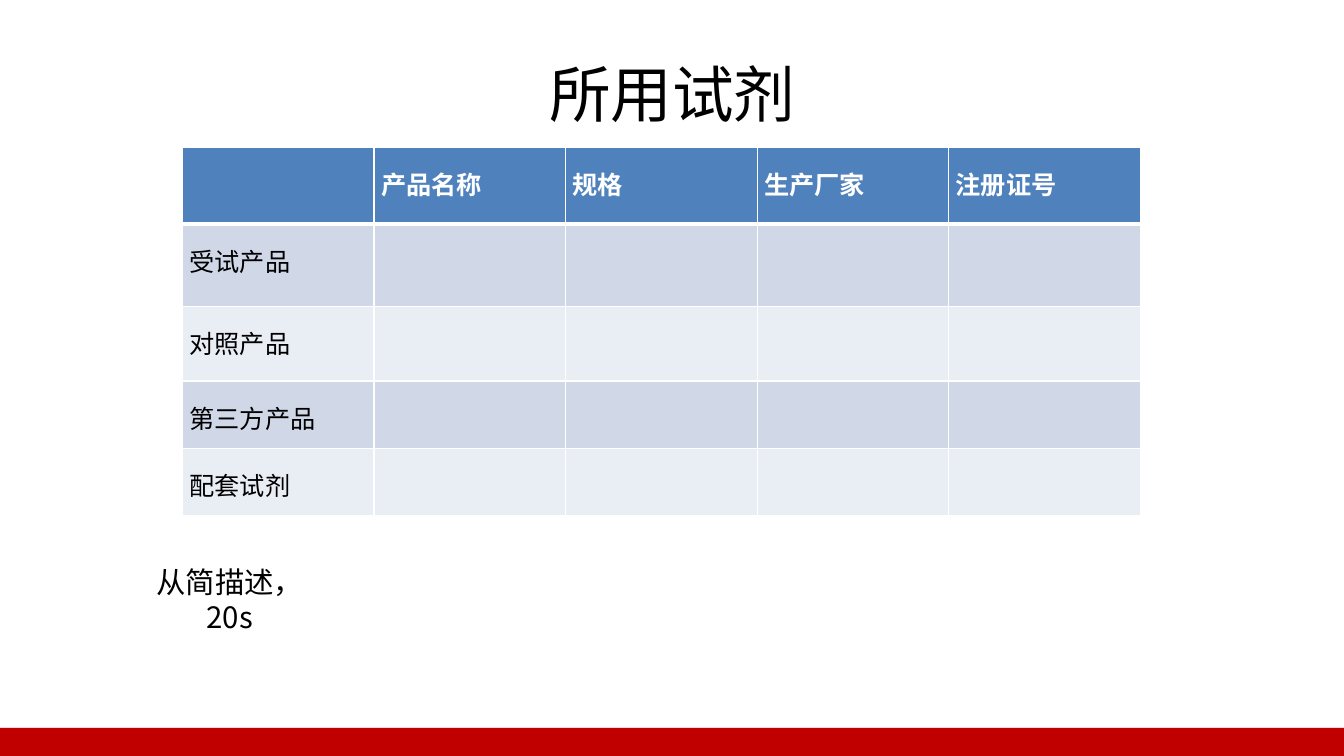
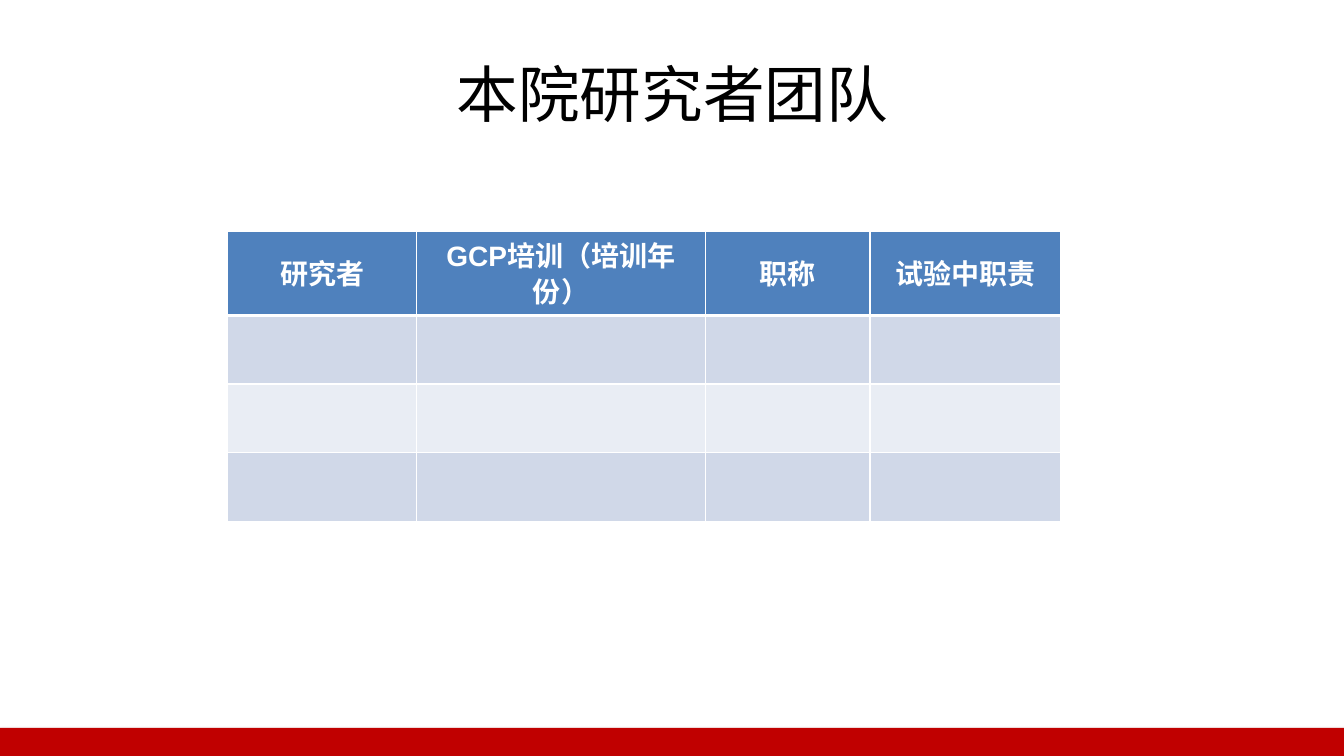
from lxml import etree
from pptx import Presentation
from pptx.dml.color import RGBColor
from pptx.enum.shapes import MSO_SHAPE
from pptx.enum.text import MSO_ANCHOR, PP_ALIGN
from pptx.oxml.ns import qn
from pptx.util import Inches, Pt

RECT = MSO_SHAPE.RECTANGLE
TOP, MIDDLE = MSO_ANCHOR.TOP, MSO_ANCHOR.MIDDLE
LEFT, CENTER, JUSTIFY = PP_ALIGN.LEFT, PP_ALIGN.CENTER, PP_ALIGN.JUSTIFY

COLORS = {"red": "C00000", "blue": "4F81BD", "dark": "D0D8E8",
          "light": "E9EDF4", "white": "FFFFFF", "black": "000000"}
CJK = "Noto Sans CJK SC"

# Text styles: font, paragraph and colour values
TITLE = {"font": {"size": Pt(44), "name": CJK},
         "para": {"alignment": CENTER}, "color": "black"}
NOTE = {"font": {"size": Pt(21), "name": CJK},
        "para": {"alignment": CENTER, "line_spacing": Pt(25)}, "color": "black"}
LABEL = {"font": {"size": Pt(18), "name": "Times New Roman", "bold": False},
         "para": {"alignment": LEFT, "line_spacing": 1.5}, "color": "black"}
HEAD = {"font": {"size": Pt(18), "name": "Times New Roman", "bold": True},
        "para": {"alignment": JUSTIFY, "line_spacing": 1.5}, "color": "white"}
TEAM = {"font": {"size": Pt(20), "name": "Arial", "bold": True},
        "para": {"alignment": CENTER, "line_spacing": 0.9, "space_after": Pt(2)},
        "color": "white"}

# Cell styles: anchor and margins
TIGHT = {"vertical_anchor": TOP, "margin_left": Inches(0.07),
         "margin_right": Inches(0.07), "margin_top": 0, "margin_bottom": 0}
ROOMY = {"vertical_anchor": MIDDLE, "margin_left": Inches(0.1),
         "margin_right": Inches(0.1), "margin_top": Inches(0.05),
         "margin_bottom": Inches(0.05)}


def rgb(name):
    return RGBColor.from_string(COLORS[name])


def apply(target, values):
    for key, value in values.items():
        setattr(target, key, value)


def write(frame, text, style):
    para = frame.paragraphs[0]
    apply(para, style["para"])
    run = para.add_run()
    run.text = text
    apply(run.font, style["font"])
    run.font.color.rgb = rgb(style["color"])
    etree.SubElement(run.font._element, qn("a:ea"), typeface=CJK)


def add_text(slide, box, text, style, anchor):
    frame = slide.shapes.add_textbox(*map(Inches, box)).text_frame
    apply(frame, {"word_wrap": True, "vertical_anchor": anchor})
    write(frame, text, style)


def add_bar(slide, box):
    bar = slide.shapes.add_shape(RECT, *map(Inches, box))
    bar.fill.solid()
    bar.fill.fore_color.rgb = rgb("red")
    bar.line.fill.background()
    # Soft shadow
    bar.shadow.inherit = False
    effects = bar._element.spPr.find(qn("a:effectLst"))
    shade = etree.SubElement(effects, qn("a:outerShdw"), blurRad=str(Pt(4)),
                             dist=str(Pt(3)), dir="2700000")
    color = etree.SubElement(shade, qn("a:srgbClr"), val=COLORS["black"])
    etree.SubElement(color, qn("a:alpha"), val="40000")


def add_edges(cell, widths):
    props = cell._tc.get_or_add_tcPr()
    for place, (side, width) in enumerate(widths.items()):
        edge = etree.Element(qn("a:ln" + side), w=str(Pt(width)))
        fill = etree.SubElement(edge, qn("a:solidFill"))
        etree.SubElement(fill, qn("a:srgbClr"), val=COLORS["white"])
        props.insert(place, edge)


def add_grid(slide, spot, cols, rows, texts, head, form):
    size = (sum(cols), sum(rows))
    table = slide.shapes.add_table(
        len(rows), len(cols), *map(Inches, spot + size)).table
    for col, width in zip(table.columns, cols):
        col.width = Inches(width)
    for r, height in enumerate(rows):
        table.rows[r].height = Inches(height)
        shade = "blue" if r == 0 else ("light", "dark")[r % 2]
        for c in range(len(cols)):
            cell = table.cell(r, c)
            cell.fill.solid()
            cell.fill.fore_color.rgb = rgb(shade)
            # Thick rule between the header and the body
            add_edges(cell, {"L": 1, "R": 1, "T": 3 if r == 1 else 1,
                             "B": 3 if r == 0 else 1})
            if (r, c) in texts:
                apply(cell, form)
                write(cell.text_frame, texts[r, c], LABEL if r else head)


def add_page(deck, title):
    slide = deck.slides.add_slide(deck.slide_layouts[6])
    add_bar(slide, (-0.03, 7.22, 13.37, 0.31))
    add_text(slide, (0.67, 0.3, 12, 1.25), title, TITLE, MIDDLE)
    return slide


def add_kits(deck):
    slide = add_page(deck, "所用试剂")
    add_text(slide, (1.43, 5.55, 1.7, 0.8), "从简描述，20s", NOTE, TOP)
    heads = ["产品名称", "规格", "生产厂家", "注册证号"]
    names = ["受试产品", "对照产品", "第三方产品", "配套试剂"]
    texts = {(0, c): text for c, text in enumerate(heads, 1)}
    texts |= {(r, 0): text for r, text in enumerate(names, 1)}
    add_grid(slide, (1.81, 1.46), [1.9] * 5, [0.76, 0.82, 0.74, 0.67, 0.67],
             texts, HEAD, TIGHT)


def add_team(deck):
    slide = add_page(deck, "本院研究者团队")
    heads = ["研究者", "GCP培训（培训年份）", "职称", "试验中职责"]
    texts = {(0, c): text for c, text in enumerate(heads)}
    # The header row holds two lines
    add_grid(slide, (2.26, 2.3), [1.87, 2.87, 1.63, 1.89],
             [0.83] + [0.68] * 3, texts, TEAM, ROOMY)


def main():
    deck = Presentation()
    deck.slide_width, deck.slide_height = Inches(13.33), Inches(7.5)
    add_kits(deck)
    add_team(deck)
    deck.save("out.pptx")


if __name__ == "__main__":
    main()
